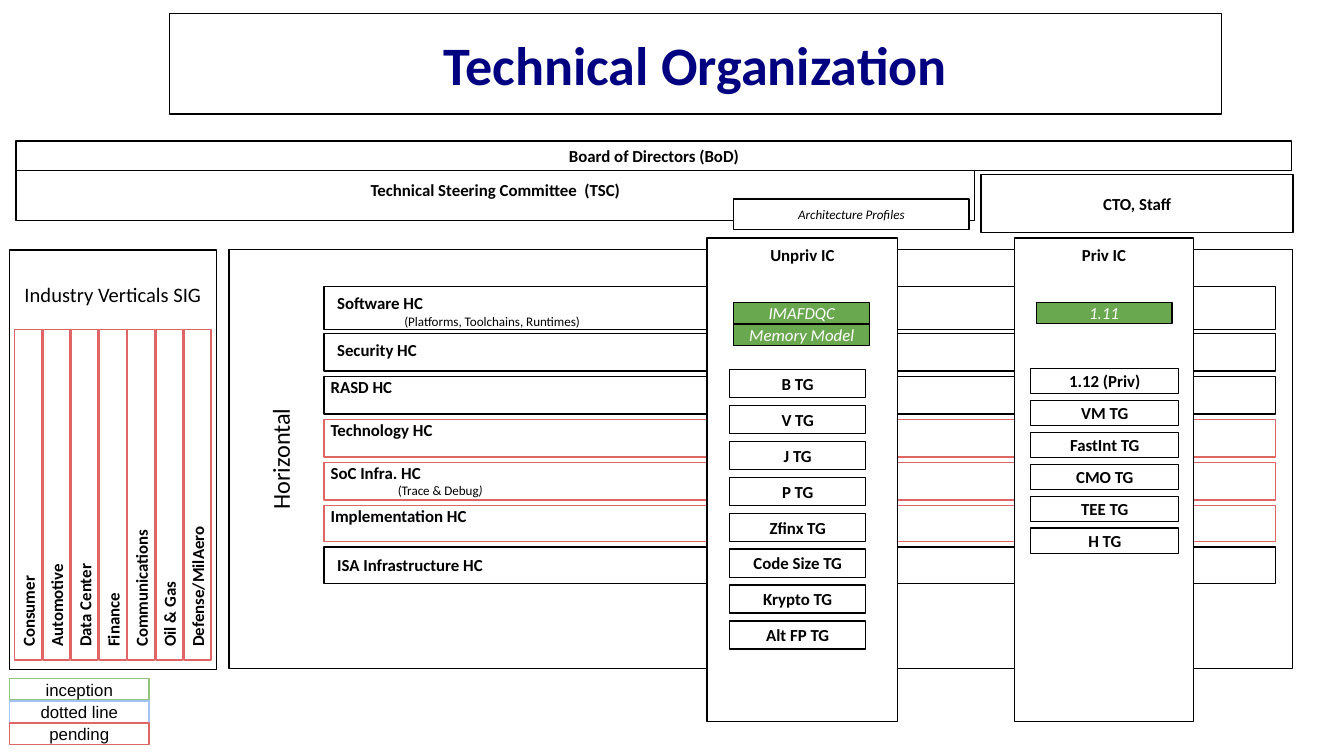
from pptx import Presentation
from pptx.dml.color import RGBColor
from pptx.enum.shapes import MSO_SHAPE
from pptx.enum.text import MSO_ANCHOR, MSO_AUTO_SIZE, PP_ALIGN
from pptx.util import Inches, Pt

BLACK = RGBColor(0x00, 0x00, 0x00)
WHITE = RGBColor(0xFF, 0xFF, 0xFF)
NAVY = RGBColor(0x00, 0x00, 0x81)
RED = RGBColor(0xE0, 0x66, 0x66)
GREEN = RGBColor(0x6A, 0xA8, 0x4F)
LIME = RGBColor(0x93, 0xC4, 0x7D)
SKY = RGBColor(0xA4, 0xC2, 0xF4)

WIDE = (0.1, 0.05, 0.1, 0.05)
SLIM = (0.05, 0, 0, 0)
NONE = (0, 0, 0, 0)


def add_run(para, text, size=9, bold=False, italic=False, color=BLACK, face="Calibri"):
    run = para.add_run()
    run.text = text
    font = run.font
    font.name, font.size = face, Pt(size)
    font.bold, font.italic = bold, italic
    font.color.rgb = color


def set_frame(shape, inset, anchor, align):
    frame = shape.text_frame
    frame.word_wrap = True
    frame.auto_size = MSO_AUTO_SIZE.NONE
    frame.vertical_anchor = anchor
    frame.margin_left, frame.margin_top, frame.margin_right, frame.margin_bottom = map(Inches, inset)
    para = frame.paragraphs[0]
    para.alignment = align
    return para


def set_line(shape, color):
    shape.line.color.rgb = color
    shape.line.width = Pt(0.75)


def add_box(slide, area, text, line=BLACK, fill=WHITE, inset=WIDE, anchor=MSO_ANCHOR.MIDDLE,
            align=PP_ALIGN.CENTER, turn=0, **style):
    box = slide.shapes.add_shape(MSO_SHAPE.RECTANGLE, *map(Inches, area))
    box.shadow.inherit = False
    box.rotation = turn
    if fill is None:
        box.fill.background()
    else:
        box.fill.solid()
        box.fill.fore_color.rgb = fill
    set_line(box, line)
    add_run(set_frame(box, inset, anchor, align), text, **style)
    return box


def add_note(box, *parts):
    para = box.text_frame.add_paragraph()
    para.alignment = PP_ALIGN.LEFT
    para._p.get_or_add_pPr().set("marL", str(Inches(0.5)))
    for text, italic in parts:
        add_run(para, text, size=7, italic=italic)


def spread(first, last, names):
    step = (last - first) / (len(names) - 1)
    return [(first + step * i, name) for i, name in enumerate(names)]


def add_title(slide):
    title = slide.shapes.title
    title.left, title.top, title.width, title.height = map(Inches, (1.26, 0.1, 7.83, 0.75))
    set_line(title, BLACK)
    para = set_frame(title, WIDE, MSO_ANCHOR.MIDDLE, PP_ALIGN.CENTER)
    add_run(para, "Technical Organization", size=29, bold=True, color=NAVY)


def add_rows(slide):
    add_box(slide, (4.1, -0.54, 3.12, 7.91), "Horizontal", inset=(0.1, 0.27, 0.1, 0.05),
            anchor=MSO_ANCHOR.TOP, turn=270, size=13)
    top, mid = MSO_ANCHOR.TOP, MSO_ANCHOR.MIDDLE
    rows = [
        ("Software HC", 2.13, 0.32, BLACK, WIDE, top),
        ("Security HC", 2.48, 0.28, BLACK, WIDE, top),
        ("RASD HC", 2.8, 0.28, BLACK, SLIM, top),
        ("Technology HC", 3.12, 0.28, RED, SLIM, top),
        ("SoC Infra. HC", 3.44, 0.28, RED, SLIM, top),
        ("Implementation HC", 3.76, 0.27, RED, SLIM, top),
        ("ISA Infrastructure HC", 4.07, 0.27, BLACK, WIDE, mid),
    ]
    made = {}
    for name, y, high, line, inset, anchor in rows:
        made[name] = add_box(slide, (2.41, y, 7.08, high), name, line=line, inset=inset,
                             anchor=anchor, align=PP_ALIGN.LEFT, bold=True)
    add_note(made["Software HC"], ("(Platforms, Toolchains, Runtimes)", False))
    add_note(made["SoC Infra. HC"], ("(Trace & Debug", False), (")", True))


def add_board(slide):
    for area, text in [
        ((0.12, 1.19, 7.13, 0.45), "Technical Steering Committee  (TSC)"),
        ((7.3, 1.3, 2.32, 0.43), "CTO, Staff"),
        ((0.12, 1.05, 9.49, 0.22), "Board of Directors (BoD)"),
    ]:
        add_box(slide, area, text, bold=True)


def add_group(slide, name, left, wide, done, tasks):
    add_box(slide, (left, 1.77, wide, 3.6), name, anchor=MSO_ANCHOR.TOP, bold=True)
    done_x, items = done
    for i, text in enumerate(items):
        add_box(slide, (done_x, 2.25 + 0.16 * i, 1.01, 0.16), text, fill=GREEN, inset=NONE,
                italic=True, color=WHITE)
    x, span, high, places = tasks
    for y, text in places:
        add_box(slide, (x, y, span, high), text, inset=NONE, bold=True)


def add_sectors(slide):
    add_box(slide, (0.07, 1.86, 1.54, 3.12), "Industry Verticals SIG",
            inset=(0.1, 0.24, 0.1, 0.05), anchor=MSO_ANCHOR.TOP, size=11)
    names = ["Consumer", "Automotive", "Data Center", "Finance", "Communications",
             "Oil & Gas", "Defense/MilAero"]
    for x, name in spread(-1.02, 0.24, names):
        add_box(slide, (x, 3.58, 2.46, 0.2), name, line=RED, align=PP_ALIGN.LEFT, turn=270, bold=True)


def add_legend(slide):
    lines = {"inception": LIME, "dotted line": SKY, "pending": RED}
    for y, name in spread(5.05, 5.38, list(lines)):
        add_box(slide, (0.07, y, 1.04, 0.16), name, line=lines[name], fill=None, inset=NONE, face="Arial")


def main():
    deck = Presentation()
    deck.slide_width, deck.slide_height = Inches(10), Inches(10) * 9 // 16
    slide = deck.slides.add_slide(deck.slide_layouts[5])
    add_title(slide)
    add_rows(slide)
    add_board(slide)
    base = ["B TG", "V TG", "J TG", "P TG", "Zfinx TG", "Code Size TG", "Krypto TG", "Alt FP TG"]
    add_group(slide, "Unpriv IC", 5.26, 1.42, (5.46, ["IMAFDQC", "Memory Model"]),
              (5.43, 1.01, 0.21, spread(2.75, 4.62, base)))
    add_box(slide, (5.46, 1.48, 1.75, 0.23), "Architecture Profiles", inset=NONE, size=7, italic=True)
    priv = ["1.12 (Priv)", "VM TG", "FastInt TG", "CMO TG", "TEE TG", "H TG"]
    add_group(slide, "Priv IC", 7.55, 1.33, (7.71, ["1.11"]),
              (7.67, 1.1, 0.19, spread(2.74, 3.93, priv)))
    add_sectors(slide)
    add_legend(slide)
    deck.save("out.pptx")


if __name__ == "__main__":
    main()
